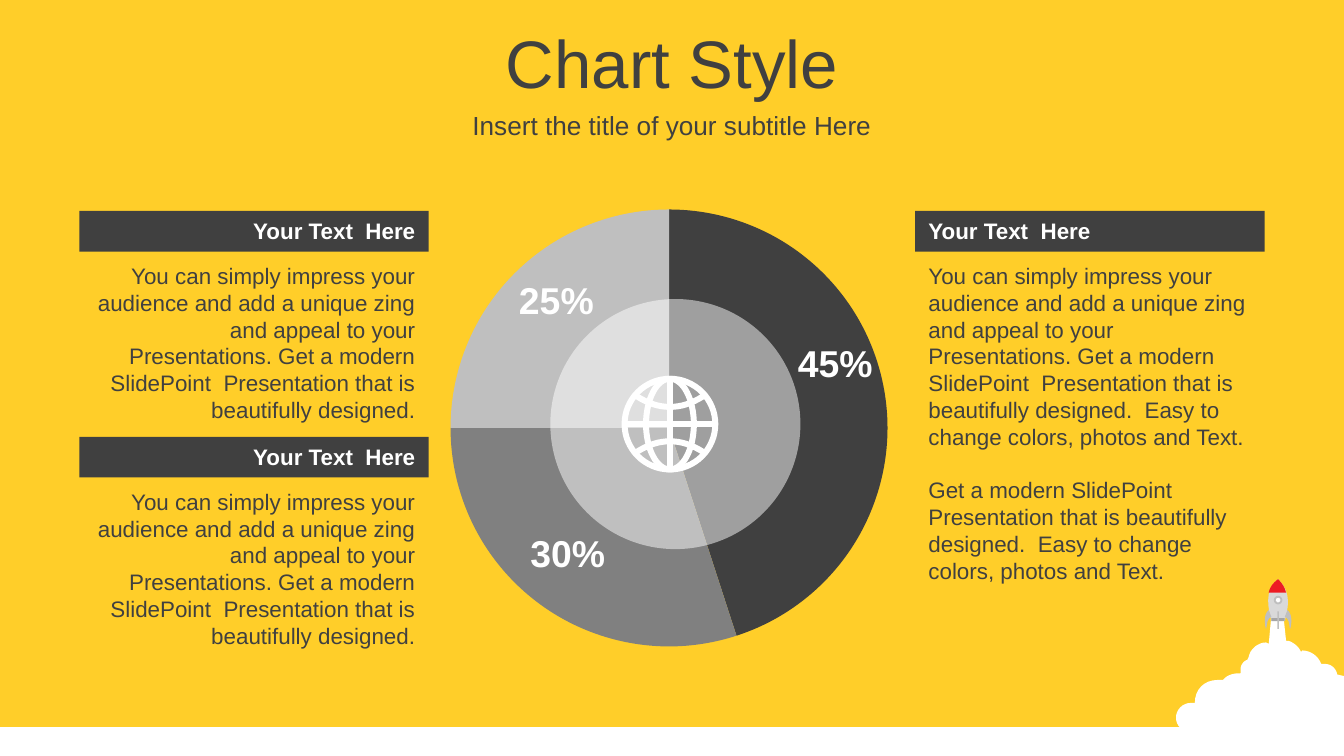
from math import cos, pi, sin

from pptx import Presentation
from pptx.chart.data import CategoryChartData
from pptx.dml.color import RGBColor
from pptx.enum.chart import XL_CHART_TYPE
from pptx.enum.shapes import MSO_SHAPE
from pptx.enum.text import MSO_ANCHOR, MSO_AUTO_SIZE, PP_ALIGN
from pptx.oxml.ns import qn
from pptx.util import Pt
from lxml.etree import SubElement

COLORS = {
    "yellow": "FFCE29", "white": "FFFFFF", "dark": "404040", "mid": "808080",
    "light": "BFBFBF", "hull": "D9D9D9", "base": "A6A6A6", "red": "ED1C24",
}
FONT = "Arial"
HEADING = "Your Text  Here"
INTRO = ("You can simply impress your audience and add a unique zing and appeal "
         "to your Presentations. Get a modern SlidePoint  Presentation that is "
         "beautifully designed.")
EASY = "  Easy to change colors, photos and Text."
MORE = "Get a modern SlidePoint  Presentation that is beautifully designed." + EASY

CLOUD = [
    (681, 330.5), (687.6, 330.5), (689, 343.4), (690.5, 343.4),
    (692.6, 344.2, 694.8, 345.6, 696.2, 347.8), (697, 349.2), (697.7, 348.5),
    (702, 348.5, 706.3, 351.4, 707.8, 355.7), (709.9, 355.7),
    (712.8, 355.7, 715.7, 357.8, 716.4, 361.4), (720, 362.2),
    (720, 403.2), (672.5, 403.9), (637.9, 392.4),
    (633.6, 392.4, 630, 388.8, 630, 384.5),
    (630, 380.2, 633.6, 376.6, 637.9, 376.6), (640.1, 376.6),
    (640.1, 369.4, 645.1, 364.3, 652.3, 364.3), (655.2, 364.3),
    (657.4, 361.4, 661, 360.7, 664.6, 360.7), (664.6, 358.6),
    (664.6, 356.4, 666, 354.2, 668.2, 353.5), (668.9, 352.1),
    (669.6, 347.8, 673.9, 344.2, 678.2, 344.2), (679.7, 344.9),
]
HULL = [(681.1, 332.6), (679.7, 326.2, 676.8, 316.8, 684.7, 310.3),
        (692.6, 317.5, 689.8, 326.9, 688.3, 332.6)]
NOSE = [(684.7, 310.3), (686.9, 312.5, 688.3, 314.6, 689, 317.5), (679.7, 317.5),
        (680.4, 314.6, 681.8, 312.5, 684.7, 310.3)]
FIN = [(679.7, 326.9), (681.1, 330.5), (678.2, 331.9, 679, 335.5, 678.2, 337),
       (677.5, 334.8, 676.8, 329, 679.7, 326.9)]
ROCKET_AXIS = 684.7


def rgb(name):
    return RGBColor.from_string(COLORS[name])


def write(sp, paragraphs, size=12, color="dark", bold=False, align=PP_ALIGN.LEFT,
          anchor=MSO_ANCHOR.TOP, gap=0):
    tf = sp.text_frame
    tf.word_wrap = True
    tf.auto_size = MSO_AUTO_SIZE.NONE
    tf.vertical_anchor = anchor
    for i, text in enumerate(paragraphs):
        p = tf.paragraphs[0] if i == 0 else tf.add_paragraph()
        p.alignment = align
        p.space_before = Pt(gap if i else 0)
        r = p.add_run()
        r.text = text
        r.font.name = FONT
        r.font.size = Pt(size)
        r.font.bold = bold
        r.font.color.rgb = rgb(color)


def place(sp, x, y, w, h):
    sp.left, sp.top, sp.width, sp.height = Pt(x), Pt(y), Pt(w), Pt(h)


def text_box(s, box, paragraphs, **fmt):
    sp = s.shapes.add_textbox(*map(Pt, box))
    write(sp, paragraphs, **fmt)


def paint(sp, fill, line=None, width=1):
    sp.shadow.inherit = False
    if fill:
        sp.fill.solid()
        sp.fill.fore_color.rgb = rgb(fill)
    else:
        sp.fill.background()
    if line:
        sp.line.color.rgb = rgb(line)
        sp.line.width = Pt(width)
    else:
        sp.line.fill.background()
    return sp


def preset(s, kind, box, fill, line=None):
    return paint(s.shapes.add_shape(kind, *map(Pt, box)), fill, line)


def flatten(path, steps=8):
    points = []
    for seg in path:
        if len(seg) == 2:
            points.append(seg)
            continue
        controls = [points[-1], seg[:2], seg[2:4], seg[4:]]
        for i in range(1, steps + 1):
            t = i / steps
            weights = ((1 - t) ** 3, 3 * t * (1 - t) ** 2, 3 * t * t * (1 - t), t ** 3)
            points.append(tuple(sum(w * c[k] for w, c in zip(weights, controls))
                                for k in (0, 1)))
    return points


def outline(s, contours, closed=True):
    contours = [[(Pt(x), Pt(y)) for x, y in c] for c in contours]
    builder = s.shapes.build_freeform(*contours[0][0], scale=1.0)
    for i, contour in enumerate(contours):
        if i:
            builder.move_to(*contour[0])
        builder.add_line_segments(contour[1:], close=closed)
    return builder.convert_to_shape()


def add_rocket(s):
    preset(s, MSO_SHAPE.RECTANGLE, (0, 389.5, 720, 15.5), "white")
    for path, fill in ((CLOUD, "white"), (HULL, "hull")):
        paint(outline(s, [flatten(path)]), fill)
    preset(s, MSO_SHAPE.RECTANGLE, (681.1, 331.2, 7.2, 1.6), "base")
    paint(outline(s, [flatten(NOSE)]), "red")
    preset(s, MSO_SHAPE.OVAL, (682.9, 319.7, 3.6, 3.6), "white", "light")
    preset(s, MSO_SHAPE.RECTANGLE, (684.3, 327.6, 0.8, 9.4), "light")
    fin = flatten(FIN)
    mirrored = [(2 * ROCKET_AXIS - x, y) for x, y in fin]
    for points in (fin, mirrored):
        paint(outline(s, [points]), "light")


def add_pie(s):
    data = CategoryChartData()
    data.categories = ["1", "2", "3"]
    data.add_series("Series 1", (45, 30, 25))
    box = map(Pt, (221.8, 96.5, 279.4, 261.4))
    chart = s.shapes.add_chart(XL_CHART_TYPE.PIE, *box, data).chart
    chart.has_legend = False
    chart.has_title = False
    chart.font.name = FONT
    chart.font.size = Pt(18)
    plot = chart.plots[0]
    plot.vary_by_categories = False
    for i, color in enumerate(("dark", "mid", "light")):
        fmt = plot.series[0].points[i].format
        fmt.fill.solid()
        fmt.fill.fore_color.rgb = rgb(color)
        fmt.line.fill.background()
    area = chart._chartSpace.chart.plotArea
    for old in area.findall(qn("c:layout")):
        area.remove(old)
    layout = area.makeelement(qn("c:layout"))
    area.insert(0, layout)
    manual = SubElement(layout, qn("c:manualLayout"))
    for tag, val in (("layoutTarget", "inner"), ("xMode", "edge"), ("yMode", "edge"),
                     ("x", 0.07), ("y", 0.057), ("w", 0.838), ("h", 0.984)):
        SubElement(manual, qn(f"c:{tag}")).set("val", str(val))


def add_globe(s, cx=358.9, cy=227.2, radius=24.3):
    def ring(rx):
        return [(cx + rx * cos(i * pi / 32), cy + radius * sin(i * pi / 32))
                for i in range(65)]

    def parallel(side):
        return [(cx + 17.6 * k / 8, cy + side * (9.2 + 5.6 * (k / 8) ** 2))
                for k in range(-8, 9)]

    contours = [ring(radius), ring(12.8), parallel(-1), parallel(1),
                [(cx, cy - radius), (cx, cy + radius)],
                [(cx - radius, cy), (cx + radius, cy)]]
    paint(outline(s, contours, closed=False), None, "white", 3.2)


def add_note(s, x, y, height, paragraphs, align):
    text_box(s, (x, y + 23.8, 187.2, height), paragraphs, align=align, gap=14)
    bar = preset(s, MSO_SHAPE.RECTANGLE, (x, y, 187.2, 21.8), "dark")
    write(bar, [HEADING], color="white", bold=True, align=align)


def main():
    prs = Presentation()
    prs.slide_width, prs.slide_height = Pt(720), Pt(405)
    s = prs.slides.add_slide(prs.slide_layouts[0])
    s.background.fill.solid()
    s.background.fill.fore_color.rgb = rgb("yellow")
    centred = {"align": PP_ALIGN.CENTER, "anchor": MSO_ANCHOR.MIDDLE}

    add_rocket(s)
    title, subtitle = s.placeholders
    place(title, 0, 10.1, 720, 45.4)
    write(title, ["Chart Style"], size=36, **centred)
    place(subtitle, 0, 55.5, 720, 22.7)
    write(subtitle, ["Insert the title of your subtitle Here"], size=14, **centred)

    add_pie(s)
    for text, x, y in (("45%", 416.2, 178.6), ("30%", 272.9, 280.3), ("25%", 266.8, 144.8)):
        text_box(s, (x, y, 62.6, 31.5), [text], size=20, color="white", bold=True, **centred)
    disc = preset(s, MSO_SHAPE.OVAL, (294.8, 160.2, 134, 134), "white")
    tint = disc._element.spPr.find(qn("a:solidFill"))[0]
    SubElement(tint, qn("a:alpha")).set("val", "50000")
    add_globe(s)

    add_note(s, 490.3, 113, 181.4, [INTRO + EASY, MORE], PP_ALIGN.LEFT)
    for y in (113, 234):
        add_note(s, 42.5, y, 94.3, [INTRO], PP_ALIGN.RIGHT)
    prs.save("out.pptx")


if __name__ == "__main__":
    main()
